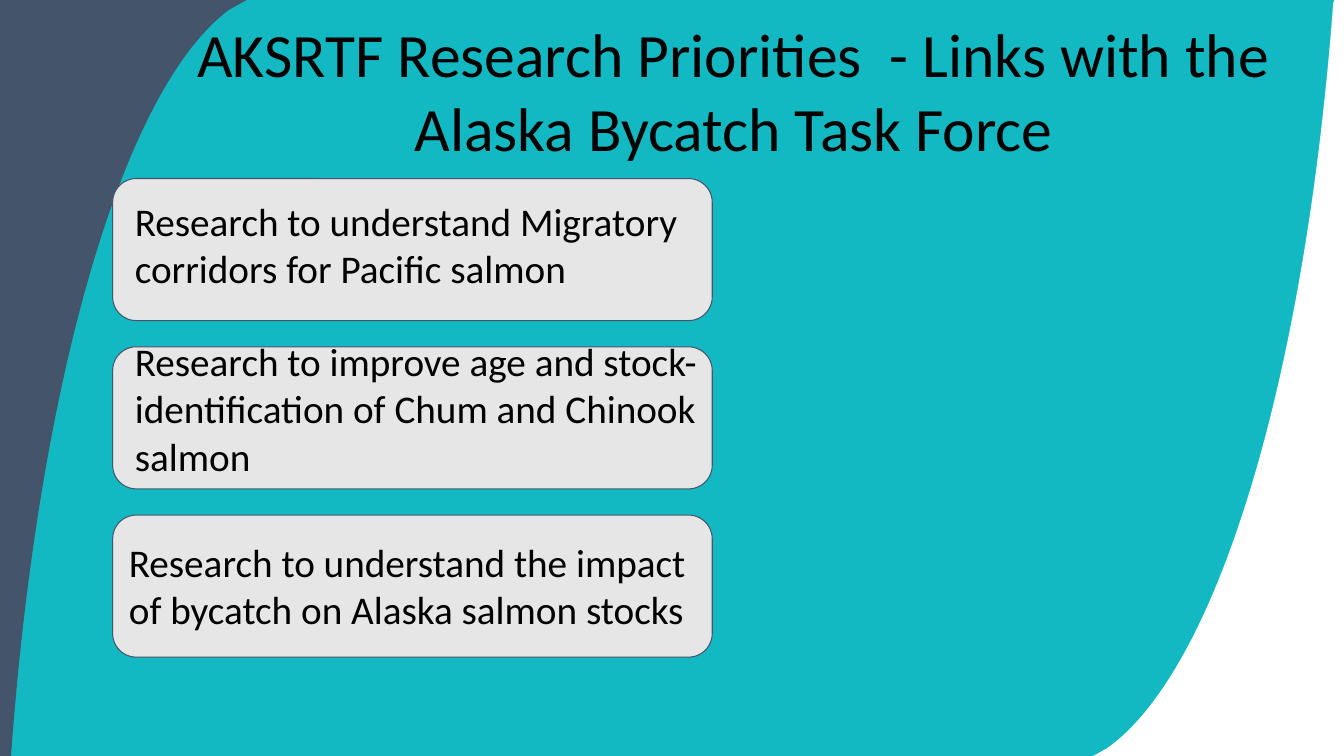
"""Build the slide on research priorities shared with the Alaska Bycatch Task Force."""
from dataclasses import dataclass

from pptx import Presentation
from pptx.dml.color import RGBColor
from pptx.enum import shapes, text
from pptx.util import Cm, Pt


@dataclass(frozen=True)
class Theme:
    teal: RGBColor = RGBColor(0x13, 0xB9, 0xC2)
    slate: RGBColor = RGBColor(0x44, 0x54, 0x6A)
    white: RGBColor = RGBColor(0xFF, 0xFF, 0xFF)
    card: RGBColor = RGBColor(0xE7, 0xE6, 0xE6)
    ink: RGBColor = RGBColor(0, 0, 0)
    font: str = "Calibri"
    title_size: Pt = Pt(44)
    body_size: Pt = Pt(28)


theme = Theme()


def paint(shape, fill, line=None):
    shape.shadow.inherit = False
    shape.fill.solid()
    shape.fill.fore_color.rgb = fill
    if line is None:
        shape.line.fill.background()
    else:
        shape.line.color.rgb = line
        shape.line.width = Pt(0.75)


def write(page, frame, wording, size, inset, align):
    box = page.shapes.add_textbox(*map(Cm, frame))
    box.text_frame.word_wrap = True
    box.text_frame.margin_top = box.text_frame.margin_bottom = Cm(inset)
    para = box.text_frame.paragraphs[0]
    para.text = wording
    para.alignment = align
    para.font.name = theme.font
    para.font.size = size
    para.font.color.rgb = theme.ink


deck = Presentation()
deck.slide_width, deck.slide_height = Cm(33.87), Cm(19.05)
page = deck.slides.add_slide(deck.slide_layouts[6])

backdrop = page.shapes.add_shape(
    shapes.MSO_SHAPE.RECTANGLE, 0, 0, deck.slide_width, deck.slide_height)
paint(backdrop, theme.teal)

corners = [
    (theme.slate,
     [(0.28, 19.1), (0, 19.1), (0, 0), (6.22, 0)],
     [(5.77, 0.25), (3.1, 2.24), (0.97, 9.58), (0.28, 19.02)]),
    (theme.white,
     [(33.63, 0), (33.88, 0), (33.88, 19.1), (27.46, 19.1)],
     [(27.91, 18.85), (30.68, 16.87), (32.89, 9.55), (33.6, 0.08)]),
]
STEPS = 60
for color, edge, curve in corners:
    outline = list(edge)
    for step in range(STEPS + 1):
        t = step / STEPS
        weights = ((1 - t) ** 3, 3 * t * (1 - t) ** 2, 3 * t ** 2 * (1 - t), t ** 3)
        outline.append(tuple(
            sum(weight * point[axis] for weight, point in zip(weights, curve))
            for axis in (0, 1)))
    points = [(Cm(x), Cm(y)) for x, y in outline]
    builder = page.shapes.build_freeform(*points[0])
    builder.add_line_segments(points[1:], close=True)
    paint(builder.convert_to_shape(), color)

write(page, (4.27, 0.28, 28.45, 4.01),
      "AKSRTF Research Priorities  - Links with the Alaska Bycatch Task Force",
      theme.title_size, 0.13, text.PP_ALIGN.CENTER)

priorities = [
    ("Research to understand Migratory corridors for Pacific salmon",
     (3.15, 4.72, 16.33, 2.9)),
    ("Research to improve age and stock-identification of Chum and Chinook salmon",
     (3.15, 8.26, 16.94, 4.11)),
    ("Research to understand the impact of bycatch on Alaska salmon stocks",
     (3, 13.31, 14.81, 2.9)),
]
CARD_TOP, CARD_PITCH = 4.5, 4.24
for row, (wording, frame) in enumerate(priorities):
    card = page.shapes.add_shape(
        shapes.MSO_SHAPE.ROUNDED_RECTANGLE,
        Cm(2.84), Cm(CARD_TOP + row * CARD_PITCH), Cm(15.11), Cm(3.58))
    paint(card, theme.card, theme.slate)
    write(page, frame, wording, theme.body_size, 0.25, text.PP_ALIGN.LEFT)

deck.save("out.pptx")
